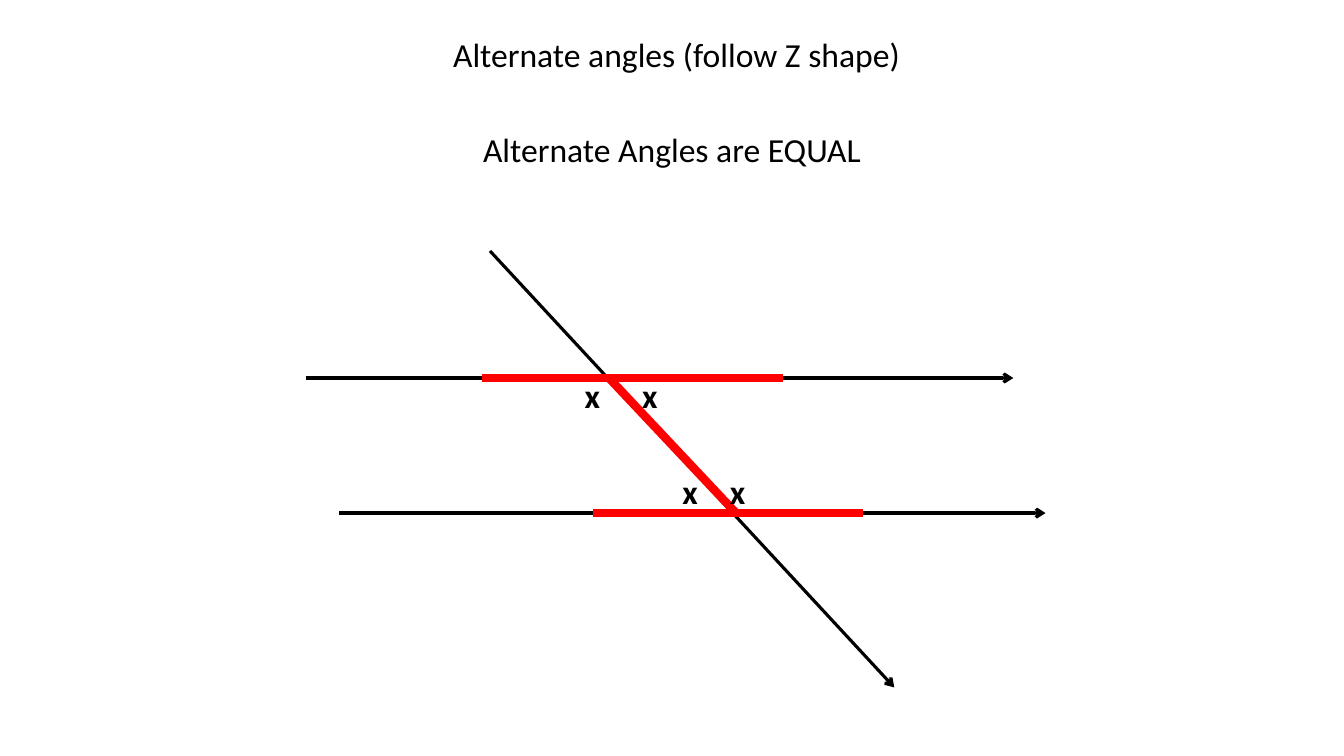
from pptx import Presentation
from pptx import util as u
from pptx.dml.color import RGBColor
from pptx.enum import shapes, text
from pptx.oxml.ns import qn
from lxml import etree

PX = u.Inches(1) // 100
BLACK = RGBColor(0, 0, 0)
RED = RGBColor(255, 0, 0)
FONT = {"name": "Calibri", "size": u.Pt(24)}


def add_line(slide, start, end, color, width, arrow=False):
    """Draw a straight line between two points, with an arrowhead if asked."""
    points = [value * PX for value in (*start, *end)]
    line = slide.shapes.add_connector(shapes.MSO_CONNECTOR.STRAIGHT, *points)
    line.line.color.rgb = color
    line.line.width = u.Pt(width)
    if arrow:
        etree.SubElement(line.line._get_or_add_ln(), qn("a:tailEnd"), type="arrow")
    etree.SubElement(line._element.spPr, qn("a:effectLst"))


def add_text(slide, box, words, alignment, wrap=True, bold=False):
    """Place one paragraph of black text in a box."""
    shape = slide.shapes.add_textbox(*(value * PX for value in box))
    frame = shape.text_frame
    frame.word_wrap = wrap
    frame.auto_size = text.MSO_AUTO_SIZE.SHAPE_TO_FIT_TEXT
    paragraph = frame.paragraphs[0]
    paragraph.alignment = alignment
    run = paragraph.add_run()
    run.text = words
    for name, value in {**FONT, "bold": bold}.items():
        setattr(run.font, name, value)
    run.font.color.rgb = BLACK


def add_headings(slide, left, top):
    """Write the heading and the rule beneath it."""
    center = text.PP_ALIGN.CENTER
    add_text(slide, (left + 8, top, 906, 50), "Alternate angles (follow Z shape)", center)
    add_text(slide, (left, top + 94, 913, 50), "Alternate Angles are EQUAL", center)


def add_diagram(slide, left, top):
    """Draw two parallels, a transversal, the red Z and the equal angles."""
    upper, lower, length = 126, 260, 701
    upper_crossing, lower_crossing = (300, upper), (426, lower)

    def place(point):
        """Shift a point of the diagram onto the slide."""
        return left + point[0], top + point[1]

    arrows = [
        ((32, lower), (32 + length, lower)),
        ((0, upper), (length, upper)),
        ((182, 0), (583, 433)),
    ]
    strokes = [
        (lower_crossing, upper_crossing),
        ((552, lower), lower_crossing),
        (lower_crossing, (284, lower)),
        ((473, upper), upper_crossing),
        (upper_crossing, (174, upper)),
    ]
    for start, end in arrows:
        add_line(slide, place(start), place(end), BLACK, 2.25, arrow=True)
    for start, end in strokes:
        add_line(slide, place(start), place(end), RED, 6)

    for label in [(323, upper - 8), (363, lower - 47), (266, upper - 8), (410, lower - 47)]:
        add_text(slide, (*place(label), 34, 50), "x", text.PP_ALIGN.LEFT, wrap=False, bold=True)


def main():
    """Build the slide and save it."""
    presentation = Presentation()
    presentation.slide_width = 1333 * PX
    presentation.slide_height = 750 * PX
    slide = presentation.slides.add_slide(presentation.slide_layouts[6])
    add_diagram(slide, 304, 249)
    add_headings(slide, 210, 29)
    presentation.save("out.pptx")


if __name__ == "__main__":
    main()
